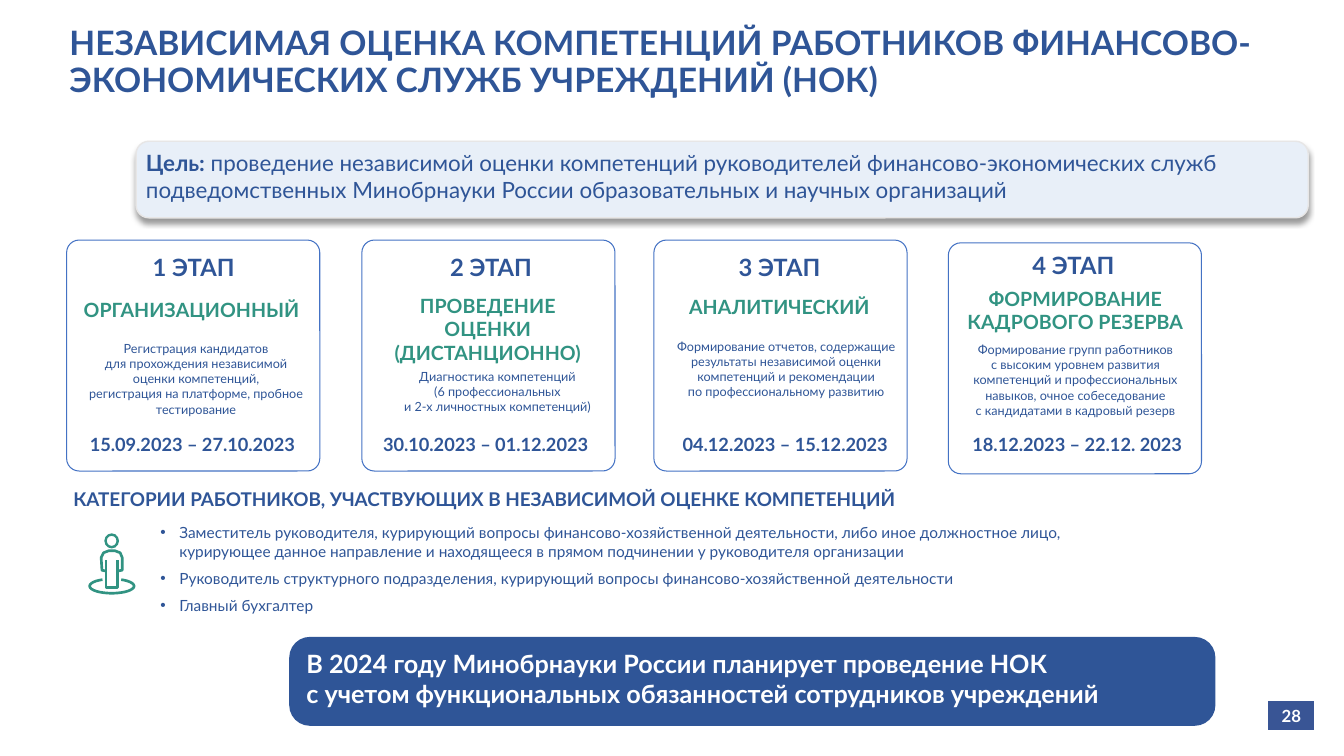
from math import cos, radians, sin
from typing import NamedTuple, Optional

from lxml.etree import SubElement
from pptx import Presentation
from pptx.dml.color import RGBColor
from pptx.enum.shapes import MSO_SHAPE as Preset
from pptx.enum.text import MSO_ANCHOR as Anchor, PP_ALIGN as Align
from pptx.oxml.ns import qn
from pptx.util import Cm, Pt

COLORS = {
    "navy": "2F5597", "green": "319382", "white": "FFFFFF", "outline": "4472C4",
    "pale": "E8EFF8", "pale_line": "E7E6E6", "page": "395595", "shadow": "000000",
}
FONT = "Lato"
CARD_WIDTH, CARD_HEIGHT = 6.38, 5.82


class Box(NamedTuple):
    left: float
    top: float
    width: float
    height: float


class Style(NamedTuple):
    size: float
    color: str = "navy"
    bold: bool = True
    align: Align = Align.LEFT
    inset: bool = False  # default text box margins
    line_spacing: Optional[float] = None
    space_before: float = 0
    bullet: bool = False
    anchor: Anchor = Anchor.TOP


class Stage(NamedTuple):
    card: tuple[float, float]
    number: Box
    name: str
    name_box: Box
    details: list[str]
    details_box: Box
    dates: str
    dates_box: Box


STAGE_NUMBER = Style(17, align=Align.CENTER)
STAGE_NAME = Style(14, "green", align=Align.CENTER)
STAGE_DETAILS = Style(9, bold=False, align=Align.CENTER)
STAGE_DATES = Style(13, align=Align.CENTER)

STAGES = [
    Stage((1.68, 6.05), Box(1.83, 6.35, 6.1, 0.76),
          "ОРГАНИЗАЦИОННЫЙ", Box(1.78, 7.47, 6.1, 0.64),
          ["Регистрация кандидатов\nдля прохождения независимой",
           "оценки компетенций,\nрегистрация на платформе, пробное тестирование"],
          Box(2.03, 8.56, 5.82, 1.96),
          "15.09.2023 – 27.10.2023", Box(1.85, 10.9, 5.99, 0.58)),
    Stage((9.12, 6.05), Box(9.63, 6.35, 5.49, 0.76),
          "ПРОВЕДЕНИЕ ОЦЕНКИ (ДИСТАНЦИОННО)", Box(9.55, 7.37, 5.49, 1.83),
          ["Диагностика компетенций\n(6 профессиональных\nи 2-х личностных компетенций)"],
          Box(9.55, 9.27, 5.97, 1.19),
          "30.10.2023 – 01.12.2023", Box(9.25, 10.9, 5.97, 0.58)),
    Stage((16.48, 6.05), Box(16.94, 6.35, 5.41, 0.76),
          "АНАЛИТИЧЕСКИЙ", Box(16.94, 7.39, 5.41, 0.64),
          ["Формирование отчетов, содержащие результаты независимой оценки "
           "компетенций и рекомендации",
           "по профессиональному развитию"],
          Box(16.89, 8.51, 5.84, 1.96),
          "04.12.2023 – 15.12.2023", Box(16.84, 10.9, 5.89, 0.58)),
    Stage((23.9, 6.12), Box(24.28, 6.3, 5.54, 0.76),
          "ФОРМИРОВАНИЕ КАДРОВОГО РЕЗЕРВА", Box(23.9, 7.19, 6.4, 1.22),
          ["Формирование групп работников\nс высоким уровнем развития "
           "компетенций и профессиональных навыков, очное собеседование",
           "с кандидатами в кадровый резерв"],
          Box(24.33, 8.59, 5.54, 1.96),
          "18.12.2023 – 22.12. 2023", Box(24.16, 10.9, 5.97, 0.58)),
]

CATEGORIES = [
    "Заместитель руководителя, курирующий вопросы финансово-хозяйственной деятельности, "
    "либо иное должностное лицо, курирующее данное направление и находящееся в прямом "
    "подчинении у руководителя организации",
    "Руководитель структурного подразделения, курирующий вопросы "
    "финансово-хозяйственной деятельности",
    "Главный бухгалтер",
]

# Person icon: open strokes in centimetres
LEGS = [(2.67, 14.12), (2.67, 14.81), (2.96, 14.81), (2.96, 14.12)]
ARMS = [(2.67, 14.39), (2.57, 14.37), (2.55, 14.05), (2.61, 13.93), (2.74, 13.88),
        (2.9, 13.88), (3.03, 13.93), (3.08, 14.05), (3.08, 14.37), (2.96, 14.39)]
RING = [(2.82 + 0.56 * cos(radians(angle)), 14.77 + 0.18 * sin(radians(angle)))
        for angle in range(-65, 246, 10)]


def rgb(name: str) -> RGBColor:
    return RGBColor.from_string(COLORS[name])


def format_runs(paragraph, style: Style) -> None:
    for run in paragraph.runs:
        run.font.name = FONT
        run.font.size = Pt(style.size)
        run.font.bold = style.bold
        run.font.color.rgb = rgb(style.color)


def add_bullet(paragraph) -> None:
    properties = paragraph._p.get_or_add_pPr()
    properties.set("marL", str(Cm(0.48)))
    properties.set("indent", str(-Cm(0.48)))
    SubElement(properties, qn("a:buFont"), typeface="Arial")
    SubElement(properties, qn("a:buChar"), char="•")


def add_text(slide, box: Box, texts: list[str], style: Style):
    text_frame = slide.shapes.add_textbox(*map(Cm, box)).text_frame
    text_frame.word_wrap = True
    text_frame.vertical_anchor = style.anchor
    if not style.inset:
        text_frame.margin_left = text_frame.margin_right = text_frame.margin_bottom = 0
        text_frame.margin_top = Cm(0.03)
    for index, text in enumerate(texts):
        paragraph = text_frame.add_paragraph() if index else text_frame.paragraphs[0]
        paragraph.text = text
        if style.bullet:
            add_bullet(paragraph)
        paragraph.alignment = style.align
        if style.line_spacing:
            paragraph.line_spacing = style.line_spacing
        if index and style.space_before:
            paragraph.space_before = Pt(style.space_before)
        format_runs(paragraph, style)
    return text_frame


def paint(shape, fill: Optional[str], line: Optional[str] = None, width: float = 1) -> None:
    shape.shadow.inherit = False
    if fill:
        shape.fill.solid()
        shape.fill.fore_color.rgb = rgb(fill)
    else:
        shape.fill.background()
    if line:
        shape.line.color.rgb = rgb(line)
        shape.line.width = Pt(width)
    else:
        shape.line.fill.background()


def add_panel(slide, box: Box, corner: float, fill: Optional[str],
              line: Optional[str] = None, width: float = 1):
    shape = slide.shapes.add_shape(Preset.ROUNDED_RECTANGLE, *map(Cm, box))
    shape.adjustments[0] = corner
    paint(shape, fill, line, width)
    return shape


def add_shadow(shape) -> None:
    effects = shape._element.spPr.find(qn("a:effectLst"))
    shadow = SubElement(effects, qn("a:outerShdw"), blurRad=str(Pt(4)), dist=str(Pt(3)),
                        dir="5400000", algn="t", rotWithShape="0")
    color = SubElement(shadow, qn("a:srgbClr"), val=COLORS["shadow"])
    SubElement(color, qn("a:alpha"), val="40000")


def add_stage(slide, number: int, stage: Stage) -> None:
    card = Box(*stage.card, CARD_WIDTH, CARD_HEIGHT)
    add_panel(slide, card, 0.054, None, "outline", 0.75)
    add_text(slide, stage.number, [f"{number} ЭТАП"], STAGE_NUMBER)
    add_text(slide, stage.name_box, [stage.name], STAGE_NAME)
    add_text(slide, stage.details_box, stage.details, STAGE_DETAILS)
    add_text(slide, stage.dates_box, [stage.dates], STAGE_DATES)


def add_person(slide) -> None:
    head = slide.shapes.add_shape(Preset.DONUT, Cm(2.63), Cm(13.44), Cm(0.37), Cm(0.38))
    head.adjustments[0] = 0.17
    paint(head, "green")
    for stroke in (LEGS, ARMS, RING):
        points = [(Cm(x), Cm(y)) for x, y in stroke]
        builder = slide.shapes.build_freeform(*points[0])
        builder.add_line_segments(points[1:], close=False)
        paint(builder.convert_to_shape(), None, "green", 1.9)


def add_page_number(slide, number: str) -> None:
    table = slide.shapes.add_table(1, 1, Cm(31.95), Cm(17.65), Cm(1.19), Cm(0.76)).table
    cell = table.cell(0, 0)
    cell.fill.solid()
    cell.fill.fore_color.rgb = rgb("page")
    cell.vertical_anchor = Anchor.MIDDLE
    cell.text_frame.text = number
    paragraph = cell.text_frame.paragraphs[0]
    paragraph.alignment = Align.CENTER
    format_runs(paragraph, Style(12, "white"))


def main() -> None:
    presentation = Presentation()
    presentation.slide_width, presentation.slide_height = Cm(33.87), Cm(19.05)
    slide = presentation.slides.add_slide(presentation.slide_layouts[6])

    # Title
    add_text(slide, Box(1.5, 0.41, 31.09, 2.36),
             ["НЕЗАВИСИМАЯ ОЦЕНКА КОМПЕТЕНЦИЙ РАБОТНИКОВ "
              "ФИНАНСОВО-ЭКОНОМИЧЕСКИХ СЛУЖБ УЧРЕЖДЕНИЙ (НОК)"],
             Style(24, inset=True, line_spacing=0.9, anchor=Anchor.MIDDLE))

    # Goal
    goal_style = Style(16, bold=False, inset=True)
    add_shadow(add_panel(slide, Box(3.43, 3.56, 29.54, 1.93), 0.167, "pale", "pale_line"))
    goal = add_text(slide, Box(3.43, 3.63, 29.57, 1.63), ["Цель:"],
                    goal_style._replace(bold=True)).paragraphs[0]
    rest = goal.add_run()
    rest.text = (" проведение независимой оценки компетенций руководителей "
                 "финансово-экономических служб подведомственных Минобрнауки России "
                 "образовательных и научных организаций")
    format_runs(goal, goal_style)
    goal.runs[0].font.bold = True

    # Stages
    for number, stage in enumerate(STAGES, 1):
        add_stage(slide, number, stage)

    # Staff categories
    add_text(slide, Box(1.85, 12.27, 23.67, 0.61),
             ["КАТЕГОРИИ РАБОТНИКОВ, УЧАСТВУЮЩИХ В НЕЗАВИСИМОЙ ОЦЕНКЕ КОМПЕТЕНЦИЙ"],
             Style(13.5))
    add_person(slide)
    add_text(slide, Box(4.04, 13.16, 23.67, 2.34), CATEGORIES,
             Style(11, bold=False, space_before=6, bullet=True))

    # Plan for the next year
    add_panel(slide, Box(7.29, 16.05, 23.34, 2.24), 0.232, "navy")
    add_text(slide, Box(7.47, 16.21, 23.22, 1.8),
             ["В 2024 году Минобрнауки России планирует проведение НОК",
              "с учетом функциональных обязанностей сотрудников учреждений"],
             Style(18, "white", inset=True))
    add_page_number(slide, "28")

    presentation.save("out.pptx")


if __name__ == "__main__":
    main()
